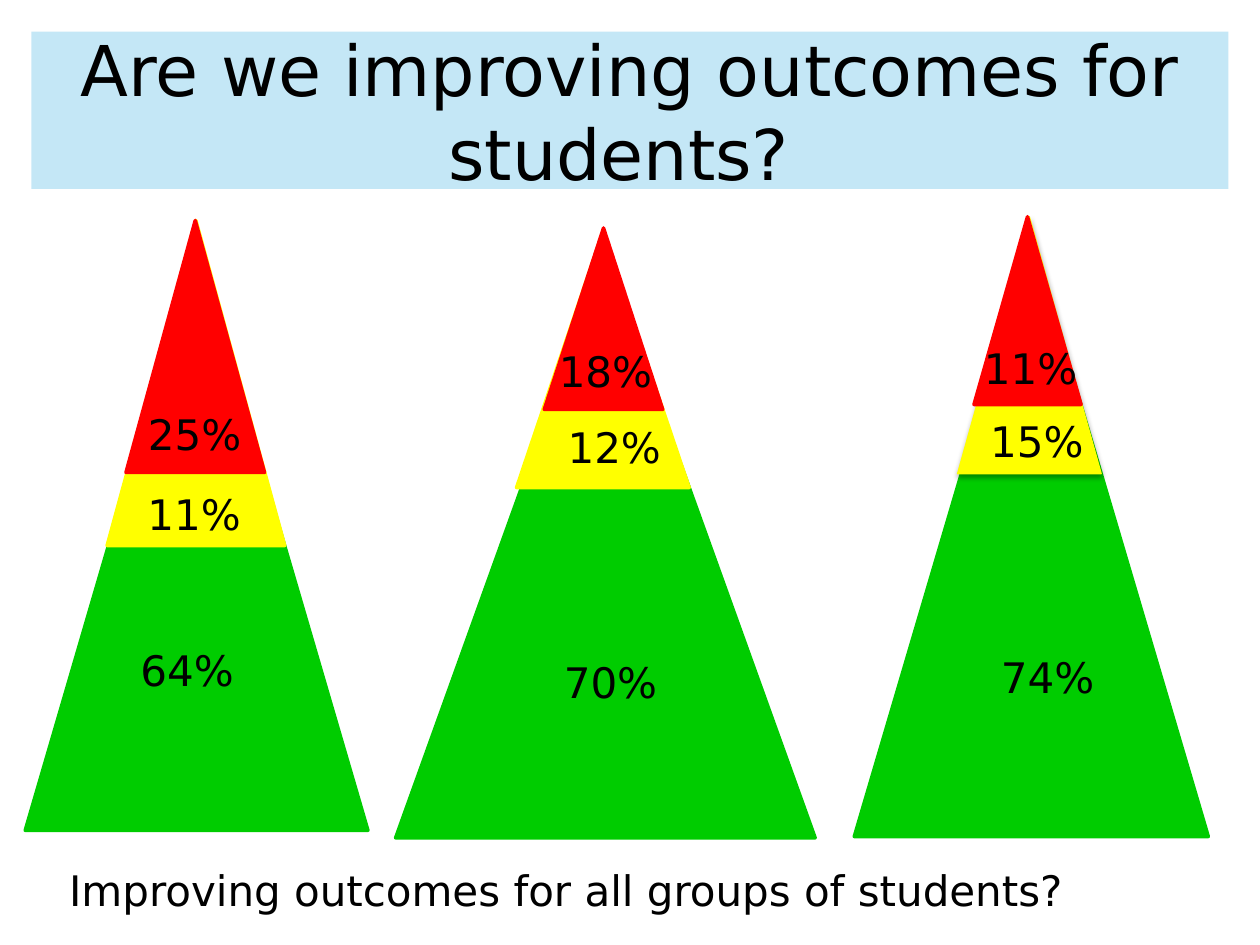
import lxml.etree
import pptx
import pptx.dml.color
import pptx.enum.shapes
import pptx.enum.text
import pptx.oxml.ns
import pptx.util

Inches = pptx.util.Inches
Pt = pptx.util.Pt
ALIGN = pptx.enum.text.PP_ALIGN
SHAPE = pptx.enum.shapes.MSO_SHAPE
qn = pptx.oxml.ns.qn

COLORS = {
    "green": "00CC00",
    "yellow": "FFFF00",
    "red": "FF0000",
    "banner": "A9DCF2",
    "text": "000000",
}

PYRAMIDS = [
    [
        ("green", (0.2, 1.94, 2.72, 4.65), "64%", (0.85, 5.07, 1.27, 0.57)),
        ("yellow", (0.85, 1.75, 1.41, 2.58), "11%", (0.75, 3.83, 1.58, 0.57)),
        ("red", (1, 1.75, 1.1, 2), "25%", (0.83, 3.19, 1.43, 0.44)),
    ],
    [
        ("green", (3.14, 2.02, 3.33, 4.63), "70%", (4.19, 5.16, 1.31, 0.57)),
        ("yellow", (4.1, 1.84, 1.37, 2.03), "12%", (4.22, 3.3, 1.31, 0.57)),
        ("red", (4.32, 1.81, 0.94, 1.44), "18%", (4.15, 2.69, 1.31, 0.44)),
    ],
    [
        ("green", (6.78, 1.88, 2.81, 4.76), "74%", (7.63, 5.12, 1.37, 0.58)),
        ("yellow", (7.6, 1.72, 1.14, 2.04), "15%", (7.5, 3.25, 1.46, 0.77)),
        ("red", (7.73, 1.72, 0.85, 1.49), "11%", (7.63, 2.67, 1.1, 0.45)),
    ],
]


class Deck:
    """Holds the style and the current slide, and draws each kind of element."""

    font = "DejaVu Sans"

    def __init__(self, slide):
        self.slide = slide

    def color(self, name):
        return pptx.dml.color.RGBColor.from_string(COLORS[name])

    def fit(self, shape, text, size, align):
        frame = shape.text_frame
        frame.word_wrap = True
        line = frame.paragraphs[0]
        line.text = text
        line.alignment = align
        line.font.name = self.font
        line.font.size = Pt(size)
        line.font.color.rgb = self.color("text")

    def shape(self, home, kind, box, fill):
        shape = home.add_shape(kind, *map(Inches, box))
        shape.shadow.inherit = False
        shape.fill.solid()
        shape.fill.fore_color.rgb = self.color(fill)
        return shape

    def banner(self, box, text):
        shape = self.shape(self.slide.shapes, SHAPE.RECTANGLE, box, "banner")
        shape.line.fill.background()
        tint = shape._element.spPr.find(".//" + qn("a:srgbClr"))
        lxml.etree.SubElement(tint, qn("a:alpha"), val="68000")
        shape.text_frame.vertical_anchor = pptx.enum.text.MSO_ANCHOR.MIDDLE
        self.fit(shape, text, 40, ALIGN.CENTER)

    def label(self, home, box, text, align=ALIGN.CENTER):
        shape = home.add_textbox(*map(Inches, box))
        self.fit(shape, text, 24, align)

    def wedge(self, home, box, fill, width=2):
        shape = self.shape(home, SHAPE.ISOSCELES_TRIANGLE, box, fill)
        shape.line.color.rgb = self.color(fill)
        shape.line.width = Pt(width)
        return shape

    def shade(self, shape):
        effect = shape._element.spPr.find(qn("a:effectLst"))
        outer = lxml.etree.SubElement(
            effect, qn("a:outerShdw"), blurRad=str(Pt(3.1)), dist=str(Pt(1.8)),
            dir="5400000", rotWithShape="0")
        tint = lxml.etree.SubElement(outer, qn("a:srgbClr"), val=COLORS["text"])
        lxml.etree.SubElement(tint, qn("a:alpha"), val="35000")

    def pyramid(self, tiers, raised):
        home = self.slide.shapes.add_group_shape().shapes
        for fill, box, _, _ in tiers:
            if raised and fill == "yellow":
                self.shade(self.wedge(home, box, fill, 0.75))
            else:
                self.wedge(home, box, fill)
        for _, _, text, box in tiers:
            self.label(home, box, text)


def main():
    show = pptx.Presentation()
    show.slide_width, show.slide_height = Inches(10), Inches(7.5)
    deck = Deck(show.slides.add_slide(show.slide_layouts[6]))
    deck.banner((0.25, 0.25, 9.5, 1.25), "Are we improving outcomes for students? ")
    for tiers in PYRAMIDS:
        deck.pyramid(tiers, raised=tiers is PYRAMIDS[-1])
    deck.label(deck.slide.shapes, (0.45, 6.81, 8.49, 0.5),
               "Improving outcomes for all groups of students?", ALIGN.LEFT)
    show.save("out.pptx")


if __name__ == "__main__":
    main()
